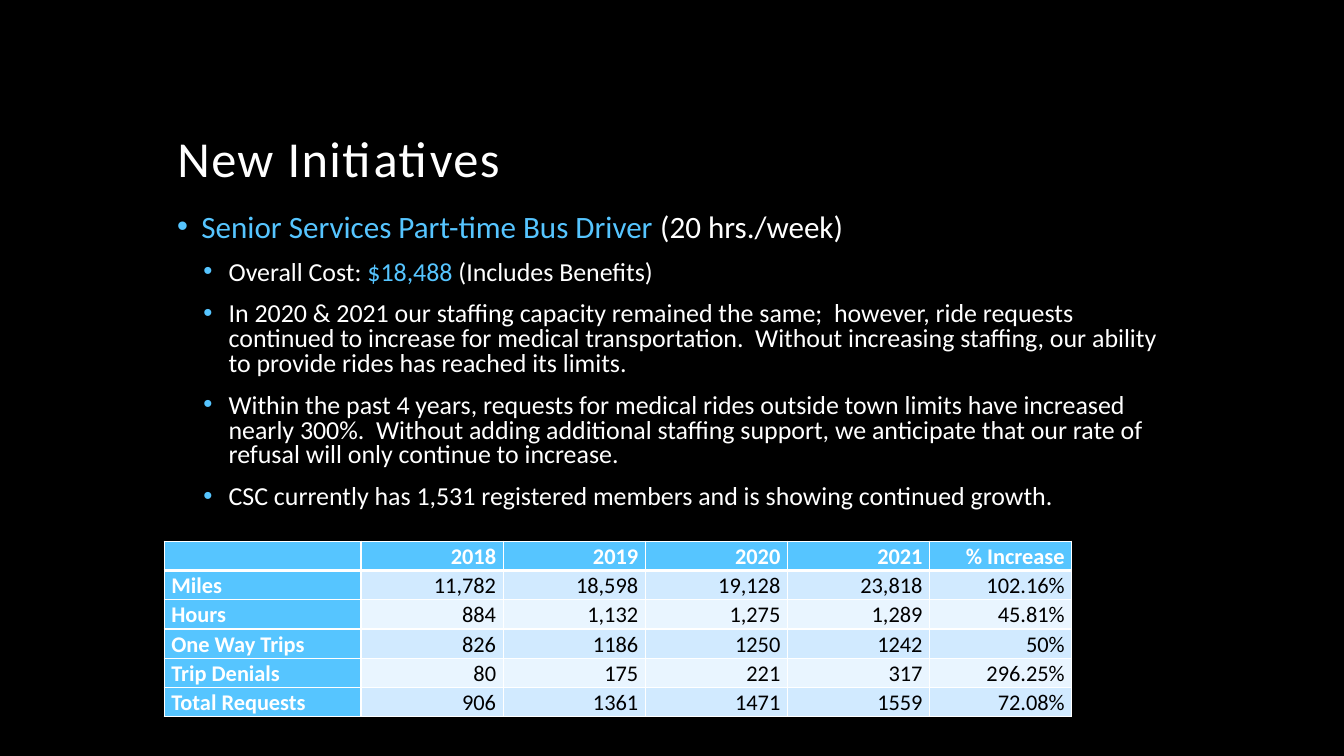
import pptx
import pptx.util
import pptx.dml.color
import pptx.enum.text
import pptx.oxml.ns
import lxml.etree

Inches = pptx.util.Inches
Pt = pptx.util.Pt
RGBColor = pptx.dml.color.RGBColor
PP_ALIGN = pptx.enum.text.PP_ALIGN
MSO_ANCHOR = pptx.enum.text.MSO_ANCHOR
qn = pptx.oxml.ns.qn

BLACK = RGBColor(0x00, 0x00, 0x00)
WHITE = RGBColor(0xFF, 0xFF, 0xFF)
BLUE = RGBColor(0x56, 0xC5, 0xFF)
BAND_DARK = RGBColor(0xD1, 0xEA, 0xFF)
BAND_LIGHT = RGBColor(0xE9, 0xF5, 0xFF)


def add_run(p, text, size, color, bold=False):
    r = p.add_run()
    r.text = text
    r.font.name = "Calibri"
    r.font.size = Pt(size)
    r.font.bold = bold
    r.font.color.rgb = color
    return r


def add_border(cell, side, width):
    ln = lxml.etree.SubElement(cell._tc.get_or_add_tcPr(), qn("a:ln" + side), w=str(Pt(width)))
    fill = lxml.etree.SubElement(ln, qn("a:solidFill"))
    lxml.etree.SubElement(fill, qn("a:srgbClr"), val=str(WHITE))


prs = pptx.Presentation()
prs.slide_width = Inches(13.33)
prs.slide_height = Inches(7.5)
s = prs.slides.add_slide(prs.slide_layouts[5])
s.background.fill.solid()
s.background.fill.fore_color.rgb = BLACK

title = s.shapes.title
title.left, title.top, title.width, title.height = Inches(1.66), Inches(0.42), Inches(10), Inches(1.5)
tf = title.text_frame
tf.auto_size = pptx.enum.text.MSO_AUTO_SIZE.NONE
tf.vertical_anchor = MSO_ANCHOR.BOTTOM
p = tf.paragraphs[0]
p.alignment = PP_ALIGN.LEFT
p.line_spacing = 0.9
r = add_run(p, "New Initiatives", 36, WHITE)
r.font._element.set("spc", "100")

bullets = [
    (0, [("Senior Services Part-time Bus Driver", BLUE), (" (20 hrs./week)", WHITE)]),
    (1, [("Overall Cost: ", WHITE), ("$18,488 ", BLUE), ("(Includes Benefits)", WHITE)]),
    (1, [("In 2020 & 2021 our staffing capacity remained the same;  however, ride requests "
          "continued to increase for medical transportation.  Without increasing staffing, "
          "our ability to provide rides has reached its limits.", WHITE)]),
    (1, [("Within the past 4 years, requests for medical rides outside town limits have "
          "increased nearly 300%.  Without adding additional staffing support, we anticipate "
          "that our rate of refusal will only continue to increase.", WHITE)]),
    (1, [("CSC currently has 1,531 registered members and is showing continued growth.", WHITE)]),
]
levels = [(22.2, 0.24, -0.24), (18.5, 0.51, -0.25)]

body = s.shapes.add_textbox(Inches(1.66), Inches(2.08), Inches(10.17), Inches(3.17))
tf = body.text_frame
tf.word_wrap = True
for i, (level, runs) in enumerate(bullets):
    size, margin, indent = levels[level]
    p = tf.add_paragraph() if i else tf.paragraphs[0]
    p.level = level
    p.line_spacing = 0.8
    p.space_before = Pt(12 if i else 0)
    pPr = p._p.get_or_add_pPr()
    pPr.set("marL", str(Inches(margin)))
    pPr.set("indent", str(Inches(indent)))
    color = lxml.etree.SubElement(pPr, qn("a:buClr"))
    lxml.etree.SubElement(color, qn("a:srgbClr"), val=str(BLUE))
    lxml.etree.SubElement(pPr, qn("a:buFont"), typeface="Arial")
    lxml.etree.SubElement(pPr, qn("a:buChar"), char="•")
    for text, color in runs:
        add_run(p, text, size, color)

rides = [
    ["", "2018", "2019", "2020", "2021", "% Increase"],
    ["Miles", "11,782", "18,598", "19,128", "23,818", "102.16%"],
    ["Hours", "884", "1,132", "1,275", "1,289", "45.81%"],
    ["One Way Trips", "826", "1186", "1250", "1242", "50%"],
    ["Trip Denials", "80", "175", "221", "317", "296.25%"],
    ["Total Requests", "906", "1361", "1471", "1559", "72.08%"],
]
table = s.shapes.add_table(6, 6, Inches(1.63), Inches(5.37), Inches(9), Inches(1.74)).table
for j, column in enumerate(table.columns):
    column.width = Inches(1.41 if j else 1.95)
for row in table.rows:
    row.height = Inches(0.29)

for i, values in enumerate(rides):
    for j, value in enumerate(values):
        cell = table.cell(i, j)
        heading = i == 0 or j == 0
        cell.margin_left = cell.margin_right = Inches(0.07)
        cell.margin_top = cell.margin_bottom = 0
        cell.vertical_anchor = MSO_ANCHOR.BOTTOM
        for side, width in [("L", 1), ("R", 1), ("T", 3 if i == 1 else 1), ("B", 3 if i == 0 else 1)]:
            add_border(cell, side, width)
        cell.fill.solid()
        cell.fill.fore_color.rgb = BLUE if heading else BAND_DARK if i % 2 else BAND_LIGHT
        p = cell.text_frame.paragraphs[0]
        p.alignment = PP_ALIGN.RIGHT if j else PP_ALIGN.LEFT
        p.line_spacing = 1.07
        if value:
            add_run(p, value, 16, WHITE if heading else BLACK, heading)
        else:
            lxml.etree.SubElement(p._p, qn("a:endParaRPr"), sz="1600")

prs.save("out.pptx")
